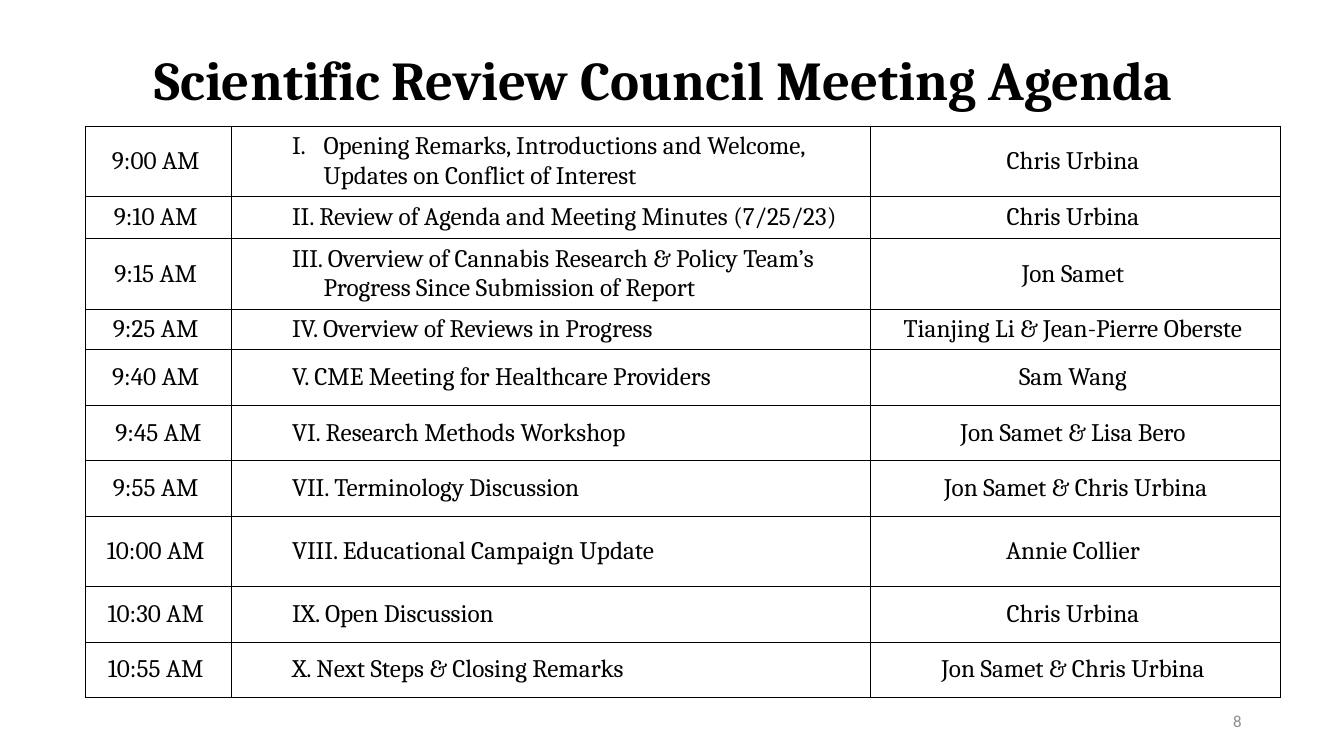
from dataclasses import dataclass
from lxml import etree
from pptx import Presentation
from pptx import util as u
from pptx.dml import color
from pptx.enum import text as t
from pptx.oxml import ns


@dataclass
class Theme:
    ink: str = "000000"
    paper: str = "FFFFFF"
    mute: str = "8C8C8C"
    serif: str = "Cambria"
    sans: str = "Calibri"
    head: float = 39.1
    body: float = 18
    foot: float = 12
    rule: float = 0.75


def rgb(code):
    return color.RGBColor.from_string(code)


def write(frame, words, font, size, ink, bold=False, align="LEFT",
          anchor="MIDDLE", lead=None, after=0):
    frame.word_wrap = True
    frame.vertical_anchor = getattr(t.MSO_ANCHOR, anchor)
    para = frame.paragraphs[0]
    para.alignment = getattr(t.PP_ALIGN, align)
    para.line_spacing = lead
    para.space_before, para.space_after = u.Pt(0), u.Pt(after)
    run = para.add_run()
    run.text = words
    run.font.name, run.font.size, run.font.bold = font, u.Pt(size), bold
    run.font.color.rgb = rgb(ink)
    return para


class Deck:
    """Hold the theme and the current slide, and add elements to it."""

    def __init__(self, show, theme):
        self.theme = theme
        self.slide = show.slides.add_slide(show.slide_layouts[5])

    def title(self, words, box):
        th, shape = self.theme, self.slide.shapes.title
        shape.left, shape.top, shape.width, shape.height = map(u.Pt, box)
        shape.text_frame.auto_size = t.MSO_AUTO_SIZE.NONE
        write(shape.text_frame, words, th.serif, th.head, th.ink,
              bold=True, anchor="BOTTOM", lead=0.8, after=6)

    def number(self, words, box):
        th = self.theme
        shape = self.slide.shapes.add_textbox(*map(u.Pt, box))
        write(shape.text_frame, words, th.sans, th.foot, th.mute,
              align="RIGHT", after=6)

    def border(self, cell):
        props = cell._tc.get_or_add_tcPr()
        for side in "LRTB":
            line = etree.SubElement(props, ns.qn(f"a:ln{side}"),
                                    w=str(u.Pt(self.theme.rule)))
            fill = etree.SubElement(line, ns.qn("a:solidFill"))
            etree.SubElement(fill, ns.qn("a:srgbClr"), val=self.theme.ink)

    def indent(self, para, left, first, scheme=None):
        props = para._p.get_or_add_pPr()
        props.set("marL", str(u.Pt(left)))
        props.set("indent", str(u.Pt(first)))
        if scheme:
            etree.SubElement(props, ns.qn("a:buFont"), typeface=self.theme.serif)
            etree.SubElement(props, ns.qn("a:buAutoNum"), type=scheme)

    def table(self, rows, left, top, cols, tall):
        th = self.theme
        frame = self.slide.shapes.add_table(
            len(rows), len(cols), *map(u.Pt, (left, top, sum(cols), sum(tall))))
        grid = frame.table
        grid.first_row = grid.horz_banding = False
        for col, wide in zip(grid.columns, cols):
            col.width = u.Pt(wide)
        for row, high, items in zip(grid.rows, tall, rows):
            row.height = u.Pt(high)
            for i, (cell, words) in enumerate(zip(row.cells, items)):
                self.border(cell)
                cell.fill.solid()
                cell.fill.fore_color.rgb = rgb(th.paper)
                cell.vertical_anchor = t.MSO_ANCHOR.MIDDLE
                topic = i == 1
                para = write(cell.text_frame, words, th.serif, th.body, th.ink,
                             align="LEFT" if topic else "CENTER")
                if topic:
                    auto = "romanUcPeriod" if items is rows[0] else None
                    self.indent(para, 58.5, -22.5, auto)


AGENDA = [
    ("9:00 AM ", "Opening Remarks, Introductions and Welcome, Updates on Conflict of Interest ", "Chris Urbina "),
    ("9:10 AM ", "II. Review of Agenda and Meeting Minutes (7/25/23) ", "Chris Urbina "),
    ("9:15 AM ", "III. Overview of Cannabis Research & Policy Team’s Progress Since Submission of Report ", "Jon Samet "),
    ("9:25 AM ", "IV. Overview of Reviews in Progress ", "Tianjing Li & Jean-Pierre Oberste "),
    ("9:40 AM ", "V. CME Meeting for Healthcare Providers ", "Sam Wang "),
    ("9:45 AM", "VI. Research Methods Workshop ", "Jon Samet & Lisa Bero "),
    ("9:55 AM ", "VII. Terminology Discussion", "Jon Samet & Chris Urbina"),
    ("10:00 AM ", "VIII. Educational Campaign Update ", "Annie Collier "),
    ("10:30 AM ", "IX. Open Discussion ", "Chris Urbina "),
    ("10:55 AM ", "X. Next Steps & Closing Remarks ", "Jon Samet & Chris Urbina "),
]


def main():
    show = Presentation()
    show.slide_width, show.slide_height = u.Pt(960), u.Pt(540)
    deck = Deck(show, Theme())
    deck.title("Scientific Review Council Meeting Agenda ", (103, 9.4, 770.4, 73.4))
    deck.number("8", (678, 500.5, 216, 28.8))
    deck.table(AGENDA, 61, 90, (104.4, 456.5, 293),
               (45, 30, 45, 29, 39.7, 39.7, 39.7, 50, 39.7, 39.7))
    show.save("out.pptx")


if __name__ == "__main__":
    main()
